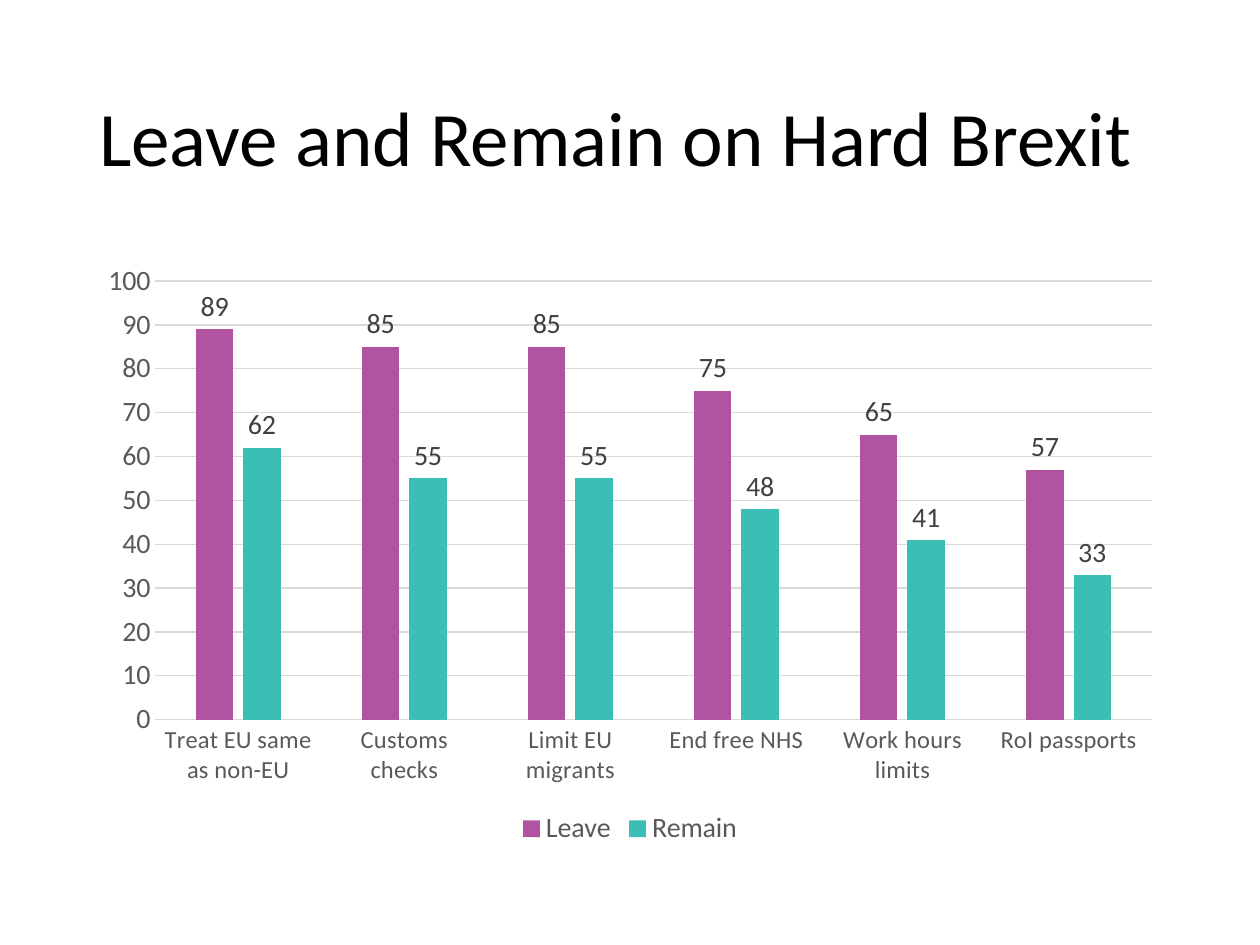
from pptx import Presentation
from pptx.chart.data import CategoryChartData
from pptx.dml.color import RGBColor
from pptx.enum.chart import XL_CHART_TYPE, XL_LABEL_POSITION, XL_LEGEND_POSITION, XL_TICK_MARK
from pptx.enum.text import MSO_ANCHOR, MSO_AUTO_SIZE, PP_ALIGN
from pptx.util import Pt

TITLE = "Leave and Remain on Hard Brexit"
CATEGORIES = ["Treat EU same as non-EU", "Customs checks", "Limit EU migrants",
              "End free NHS", "Work hours limits", "RoI passports"]
SERIES = {
    "Leave": [89, 85, 85, 75, 65, 57],
    "Remain": [62, 55, 55, 48, 41, 33],
}
COLORS = {"Leave": "B053A1", "Remain": "3BBEB4", "title": "000000",
          "axis": "595959", "label": "404040", "line": "D9D9D9"}
FONT = "Calibri"
LEFT, WIDTH = 49.5, 621
TITLE_TOP, TITLE_HEIGHT = 28.75, 104.4
CHART_TOP, CHART_HEIGHT = 144, 342.6


def color(name):
    return RGBColor.from_string(COLORS[name])


def format_font(font, size, color_name):
    font.name = FONT
    font.size = Pt(size)
    font.bold = False
    font.color.rgb = color(color_name)


def set_text(shape, text, *, size, color_name, align, anchor, line_spacing):
    frame = shape.text_frame
    frame.word_wrap = True
    frame.auto_size = MSO_AUTO_SIZE.NONE
    frame.vertical_anchor = anchor
    paragraph = frame.paragraphs[0]
    paragraph.alignment = align
    paragraph.line_spacing = line_spacing
    run = paragraph.add_run()
    run.text = text
    format_font(run.font, size, color_name)


def format_line(line):
    line.color.rgb = color("line")
    line.width = Pt(0.75)


def add_column_chart(slide):
    data = CategoryChartData()
    data.categories = CATEGORIES
    for name, values in SERIES.items():
        data.add_series(name, values)
    chart = slide.shapes.add_chart(
        XL_CHART_TYPE.COLUMN_CLUSTERED, Pt(LEFT), Pt(CHART_TOP),
        Pt(WIDTH), Pt(CHART_HEIGHT), data).chart
    chart.has_title = False
    chart.font.name = FONT
    chart.font.size = Pt(10)

    for axis, size in ((chart.category_axis, 14), (chart.value_axis, 16)):
        axis.major_tick_mark = axis.minor_tick_mark = XL_TICK_MARK.NONE
        format_font(axis.tick_labels.font, size, "axis")
    format_line(chart.category_axis.format.line)
    chart.value_axis.format.line.fill.background()
    chart.value_axis.minimum_scale = 0
    chart.value_axis.maximum_scale = 100
    chart.value_axis.major_unit = 10
    format_line(chart.value_axis.major_gridlines.format.line)

    chart.has_legend = True
    chart.legend.position = XL_LEGEND_POSITION.BOTTOM
    chart.legend.include_in_layout = False
    format_font(chart.legend.font, 16, "axis")

    plot = chart.plots[0]
    plot.gap_width = 219
    plot.overlap = -27
    plot.vary_by_categories = False
    for series in plot.series:
        series.invert_if_negative = False
        series.format.fill.solid()
        series.format.fill.fore_color.rgb = color(series.name)
        labels = series.data_labels
        labels.show_value = True
        labels.position = XL_LABEL_POSITION.OUTSIDE_END
        format_font(labels.font, 16, "label")


def main():
    presentation = Presentation()
    presentation.slide_width, presentation.slide_height = Pt(720), Pt(540)
    slide = presentation.slides.add_slide(presentation.slide_layouts[5])
    title = slide.shapes.title
    title.left, title.top = Pt(LEFT), Pt(TITLE_TOP)
    title.width, title.height = Pt(WIDTH), Pt(TITLE_HEIGHT)
    set_text(title, TITLE, size=44, color_name="title", align=PP_ALIGN.LEFT,
             anchor=MSO_ANCHOR.MIDDLE, line_spacing=0.9)
    add_column_chart(slide)
    presentation.save("out.pptx")


if __name__ == "__main__":
    main()
